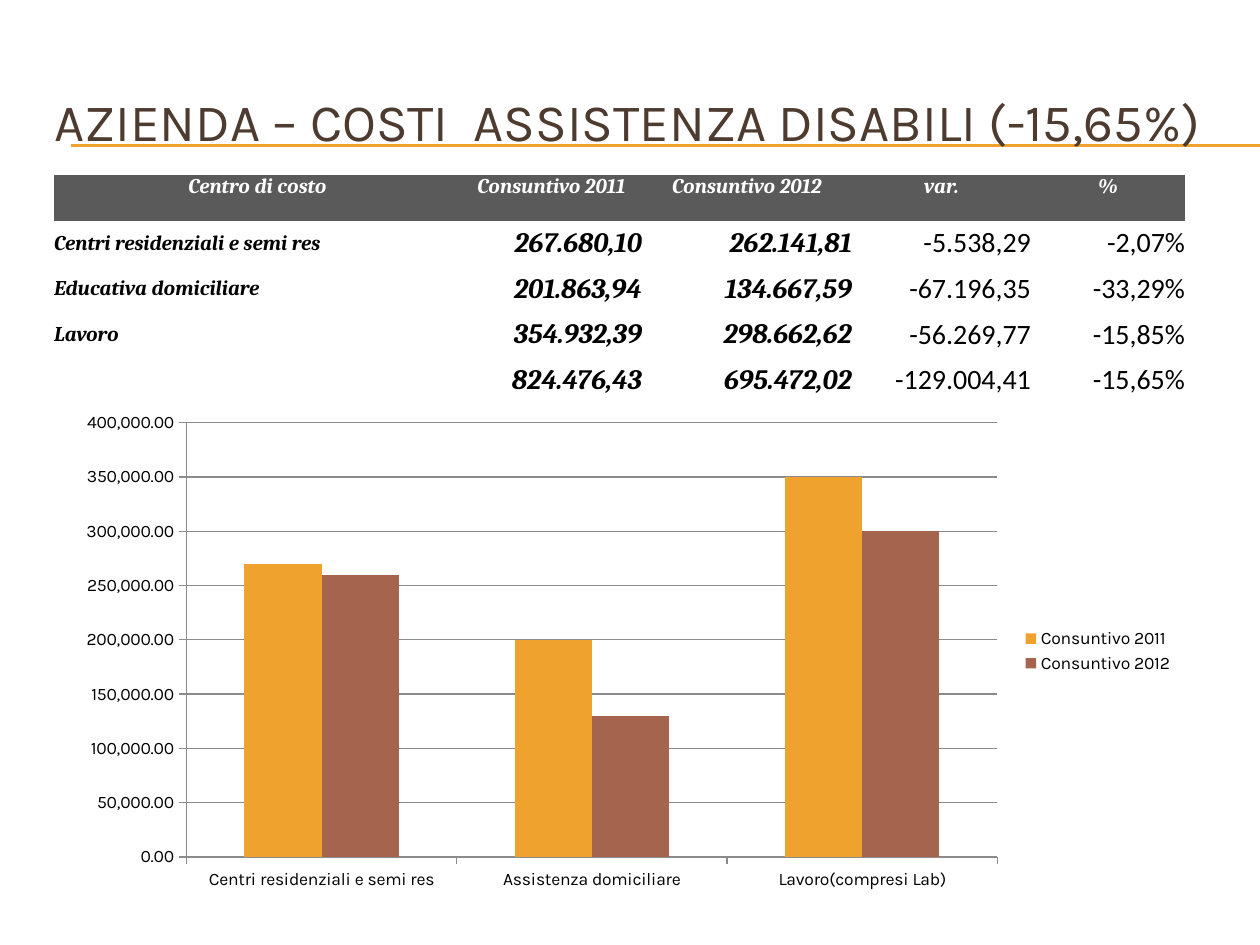
from lxml import etree
from pptx import Presentation
from pptx import util as u
from pptx.chart.data import CategoryChartData
from pptx.dml.color import RGBColor
from pptx.enum import chart as charts, shapes, text
from pptx.oxml.ns import qn

PX = 914400 // 126
ORANGE = RGBColor(0xF0, 0xA2, 0x2E)
RUST = RGBColor(0xA5, 0x64, 0x4E)
BROWN = RGBColor(0x4E, 0x3B, 0x30)
DARK_GRAY = RGBColor(0x5A, 0x5A, 0x5A)
AXIS_GRAY = RGBColor(0x8B, 0x8B, 0x8B)
WHITE = RGBColor(0xFF, 0xFF, 0xFF)
BLACK = RGBColor(0, 0, 0)
NO_STYLE_NO_GRID = "{2D5ABB26-0587-4C30-8999-92F81FD0307C}"

HEADER = ["Centro di costo", "Consuntivo 2011", "Consuntivo 2012", "var.", "%"]
COSTS = [
    ["Centri residenziali e semi res", "267.680,10", "262.141,81", "-5.538,29", "-2,07%"],
    ["Educativa domiciliare", "201.863,94", "134.667,59", "-67.196,35", "-33,29%"],
    ["Lavoro", "354.932,39", "298.662,62", "-56.269,77", "-15,85%"],
    ["", "824.476,43", "695.472,02", "-129.004,41", "-15,65%"],
]


def style(font, name, size, color, strong=False):
    font.name = name
    font.size = u.Pt(size)
    font.color.rgb = color
    font.bold = font.italic = strong


presentation = Presentation()
presentation.slide_width = 1260 * PX
presentation.slide_height = 945 * PX
slide = presentation.slides.add_slide(presentation.slide_layouts[6])

# Double rule under the title
for y in (145, 146):
    rule = slide.shapes.add_connector(
        shapes.MSO_CONNECTOR.STRAIGHT, 71 * PX, y * PX, 1260 * PX, y * PX)
    rule.line.color.rgb = ORANGE
    rule.line.width = u.Pt(0.75)
    etree.SubElement(rule._element.spPr, qn("a:effectLst"))

# Title
title = slide.shapes.add_textbox(42 * PX, 63 * PX, 1197 * PX, 116 * PX)
title.text_frame.word_wrap = True
title.text_frame.vertical_anchor = text.MSO_ANCHOR.MIDDLE
title.text_frame.text = "AZIENDA – COSTI  ASSISTENZA DISABILI (-15,65%)"
style(title.text_frame.paragraphs[0].runs[0].font, "Karla", 30, BROWN)

# Cost table
rows = [HEADER] + COSTS
table = slide.shapes.add_table(
    len(rows), len(HEADER), 54 * PX, 175 * PX, 1131 * PX, 228 * PX).table
table.horz_banding = False
table.first_row = False
table._tbl.tblPr.find(qn("a:tableStyleId")).text = NO_STYLE_NO_GRID
for column, width in zip(table.columns, (407, 181, 210, 179, 154)):
    column.width = width * PX
for i, labels in enumerate(rows):
    table.rows[i].height = 228 * PX // len(rows)
    for j, label in enumerate(labels):
        cell = table.cell(i, j)
        cell.margin_left = cell.margin_right = cell.margin_top = cell.margin_bottom = 0
        cell.text_frame.text = label
        paragraph = cell.text_frame.paragraphs[0]
        if i == 0:
            cell.fill.solid()
            cell.fill.fore_color.rgb = DARK_GRAY
            paragraph.alignment = text.PP_ALIGN.CENTER
        else:
            cell.fill.background()
            cell.vertical_anchor = text.MSO_ANCHOR.MIDDLE
            paragraph.alignment = text.PP_ALIGN.RIGHT if j else text.PP_ALIGN.LEFT
        variance = i > 0 and j > 2
        for run in paragraph.runs:
            style(run.font, "Calibri" if variance else "Cambria",
                  16 if i and j else 12, BLACK if i else WHITE, not variance)

# Column chart of the three cost centres
chart_data = CategoryChartData(number_format="#,##0.00")
chart_data.categories = [
    "Centri residenziali e semi res", "Assistenza domiciliare", "Lavoro(compresi Lab)"]
chart_data.add_series("Consuntivo 2011", (270000, 200000, 350000))
chart_data.add_series("Consuntivo 2012", (260000, 130000, 300000))
chart = slide.shapes.add_chart(
    charts.XL_CHART_TYPE.COLUMN_CLUSTERED,
    64 * PX, 403 * PX, 1122 * PX, 496 * PX, chart_data).chart
style(chart.font, "Karla", 10, BLACK)
chart.has_title = False
chart.has_legend = True
chart.legend.position = charts.XL_LEGEND_POSITION.RIGHT
chart.legend.include_in_layout = False

plot = chart.plots[0]
plot.gap_width = 150
plot.overlap = 0
plot.vary_by_categories = False
for series, color in zip(plot.series, (ORANGE, RUST)):
    series.format.fill.solid()
    series.format.fill.fore_color.rgb = color

value_axis = chart.value_axis
value_axis.minimum_scale = 0
value_axis.maximum_scale = 400000
value_axis.major_unit = 50000
value_axis.tick_labels.number_format = "#,##0.00"
value_axis.tick_labels.number_format_is_linked = False
value_axis.has_major_gridlines = True
value_axis.major_gridlines.format.line.color.rgb = AXIS_GRAY
for axis in (value_axis, chart.category_axis):
    axis.major_tick_mark = charts.XL_TICK_MARK.OUTSIDE
    axis.format.line.color.rgb = AXIS_GRAY

presentation.save("out.pptx")
